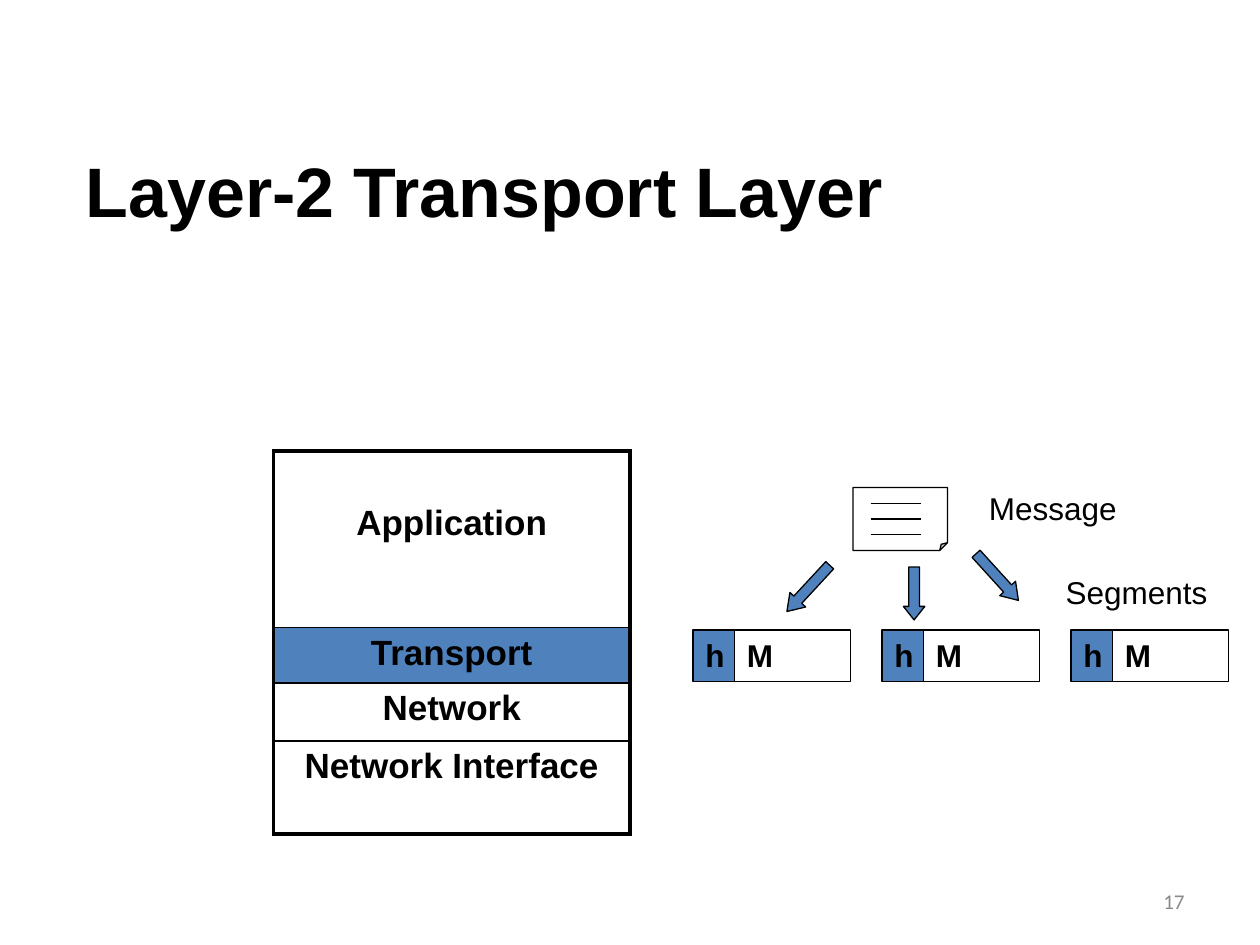
from dataclasses import dataclass

import pptx
import pptx.dml.color
import pptx.enum.shapes
import pptx.enum.text
import pptx.oxml
import pptx.oxml.ns
import pptx.util
from pptx.util import Inches

SHAPE = pptx.enum.shapes.MSO_SHAPE
ALIGN = pptx.enum.text.PP_ALIGN
ANCHOR = pptx.enum.text.MSO_ANCHOR


@dataclass(frozen=True)
class Theme:
    black: str = "000000"
    white: str = "FFFFFF"
    accent: str = "4F81BD"
    muted: str = "898989"
    font: str = "Arial"
    number_font: str = "Calibri"
    title_size: float = 40
    layer_size: float = 20
    label_size: float = 18
    number_size: float = 12
    thin: float = 0.75
    inner: float = 1
    outer: float = 2.25


@dataclass(frozen=True)
class Box:
    left: float
    top: float
    width: float
    height: float

    def inside(self, left, top, width, height):
        return Box(self.left + left, self.top + top, width, height)

    def lengths(self):
        return [Inches(v) for v in (self.left, self.top, self.width, self.height)]


THEME = Theme()


def rgb(color):
    return pptx.dml.color.RGBColor.from_string(color)


def write(frame, text, size, bold=False, align=ALIGN.LEFT, font=THEME.font, color=THEME.black):
    frame.text = text
    paragraph = frame.paragraphs[0]
    paragraph.alignment = align
    face = paragraph.runs[0].font
    face.name, face.size, face.bold = font, pptx.util.Pt(size), bold
    face.color.rgb = rgb(color)


def add_outlined(shapes, kind, box, fill):
    shape = shapes.add_shape(kind, *box.lengths())
    shape.shadow.inherit = False
    shape.fill.solid()
    shape.fill.fore_color.rgb = rgb(fill)
    shape.line.color.rgb = rgb(THEME.black)
    shape.line.width = pptx.util.Pt(THEME.thin)
    return shape


def add_label(slide, box, text):
    frame = slide.shapes.add_textbox(*box.lengths()).text_frame
    frame.word_wrap = False
    write(frame, text, THEME.label_size)


def add_title(slide, box):
    title = slide.shapes.title
    title.left, title.top, title.width, title.height = box.lengths()
    frame = title.text_frame
    frame.vertical_anchor = ANCHOR.MIDDLE
    write(frame, "Layer-2 Transport Layer", THEME.title_size, bold=True)
    frame.paragraphs[0].line_spacing = 0.9


def add_slide_number(slide, box):
    frame = slide.shapes.add_textbox(*box.lengths()).text_frame
    frame.word_wrap = True
    frame.vertical_anchor = ANCHOR.MIDDLE
    write(frame, "17", THEME.number_size, align=ALIGN.RIGHT,
          font=THEME.number_font, color=THEME.muted)


def set_border(cell, side, points):
    border = pptx.oxml.parse_xml(
        f'<a:{side} {pptx.oxml.ns.nsdecls("a")} w="{pptx.util.Pt(points)}">'
        f'<a:solidFill><a:srgbClr val="{THEME.black}"/></a:solidFill></a:{side}>')
    cell._tc.get_or_add_tcPr().append(border)


def add_layer_stack(slide, box):
    layers = [("Application", 1.4, THEME.white), ("Transport", 0.44, THEME.accent),
              ("Network", 0.46, THEME.white), ("Network Interface", 0.74, THEME.white)]
    table = slide.shapes.add_table(len(layers), 1, *box.lengths()).table
    table.first_row = table.horz_banding = False
    for index, (name, height, fill) in enumerate(layers):
        table.rows[index].height = Inches(height)
        cell = table.cell(index, 0)
        cell.margin_top = Inches(0.42 if index == 0 else 0.05)
        write(cell.text_frame, name, THEME.layer_size, bold=True, align=ALIGN.CENTER)
        set_border(cell, "lnL", THEME.outer)
        set_border(cell, "lnR", THEME.outer)
        set_border(cell, "lnT", THEME.outer if index == 0 else THEME.inner)
        set_border(cell, "lnB", THEME.outer if index == len(layers) - 1 else THEME.inner)
        cell.fill.solid()
        cell.fill.fore_color.rgb = rgb(fill)


def add_message(slide, box):
    parts = slide.shapes.add_group_shape().shapes
    page = add_outlined(parts, SHAPE.FOLDED_CORNER, box, THEME.white)
    page._element.spPr.prstGeom.get_or_add_avLst().append(pptx.oxml.parse_xml(
        f'<a:gd {pptx.oxml.ns.nsdecls("a")} name="adj" fmla="val 12500"/>'))
    left = box.left + 0.14
    for row in (1, 2, 3):
        y = Inches(box.top + row * box.height / 4)
        text_line = parts.add_connector(pptx.enum.shapes.MSO_CONNECTOR.STRAIGHT,
                                        Inches(left), y, Inches(left + 0.4), y)
        text_line.line.color.rgb = rgb(THEME.black)
        text_line.line.width = pptx.util.Pt(THEME.thin)
        text_line._element.spPr.append(
            pptx.oxml.parse_xml(f'<a:effectLst {pptx.oxml.ns.nsdecls("a")}/>'))


def add_segment(slide, box):
    parts = slide.shapes.add_group_shape().shapes
    fields = [("h", box.inside(0, 0, 0.35, box.height), THEME.accent),
              ("M", box.inside(0.33, 0, box.width - 0.33, box.height), THEME.white)]
    for letter, place, fill in fields:
        field = add_outlined(parts, SHAPE.RECTANGLE, place, fill)
        field.text_frame.word_wrap = letter == "M"
        field.text_frame.vertical_anchor = ANCHOR.TOP
        write(field.text_frame, letter, THEME.label_size, bold=True)


def add_split_arrow(slide, box, rotation, head):
    arrow = add_outlined(slide.shapes, SHAPE.DOWN_ARROW, box, THEME.accent)
    arrow.adjustments[0], arrow.adjustments[1] = 0.5, head
    arrow.rotation = rotation


def add_segmentation(slide, box):
    add_message(slide, box.inside(1.27, 0.04, 0.75, 0.5))
    add_label(slide, box.inside(2.25, 0, 1.37, 0.5), "Message")
    add_label(slide, box.inside(2.86, 0.67, 1.5, 0.5), "Segments")
    for index in range(3):
        add_segment(slide, box.inside(index * 1.5, 1.17, 1.25, 0.41))
    add_split_arrow(slide, box.inside(0.83, 0.59, 0.17, 0.5), 42.8, 0.75)
    add_split_arrow(slide, box.inside(1.67, 0.67, 0.17, 0.42), 0, 0.63)
    add_split_arrow(slide, box.inside(2.33, 0.5, 0.17, 0.5), 317.7, 0.75)


def main():
    deck = pptx.Presentation()
    deck.slide_width, deck.slide_height = Inches(10), Inches(7.5)
    slide = deck.slides.add_slide(deck.slide_layouts.get_by_name("Title Only"))
    add_title(slide, Box(0.58, 0.92, 7.58, 1.25))
    add_layer_stack(slide, Box(2.17, 3.58, 2.83, 3.04))
    add_segmentation(slide, Box(5.5, 3.83, 4.25, 1.58))
    add_slide_number(slide, Box(7.17, 6.95, 2.33, 0.4))
    deck.save("out.pptx")


if __name__ == "__main__":
    main()
